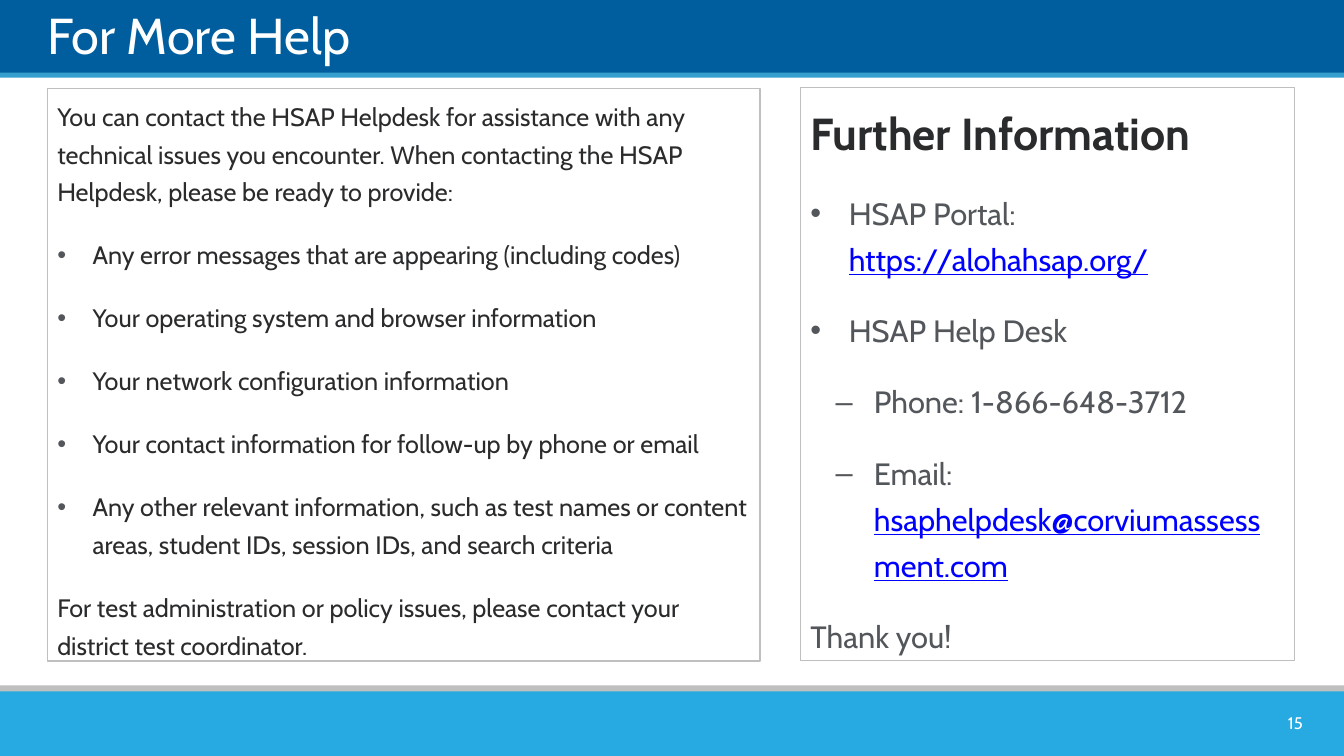
import pptx
import pptx.dml.color
import pptx.enum.shapes
import pptx.enum.text
import pptx.oxml.ns
import pptx.util
from dataclasses import dataclass
from lxml import etree

Inches = pptx.util.Inches
Pt = pptx.util.Pt
Anchor = pptx.enum.text.MSO_ANCHOR
Align = pptx.enum.text.PP_ALIGN


@dataclass(frozen=True)
class Theme:
    font: str = "Cabin"
    navy: str = "005E9E"
    blue: str = "35A0CE"
    sky: str = "27AAE1"
    silver: str = "BFBFBF"
    white: str = "FFFFFF"
    ink: str = "2A2B2D"
    slate: str = "53565A"
    link: str = "0000FF"
    title: int = 36
    heading: int = 32
    contact: int = 22
    body: int = 18
    number: int = 12


@dataclass(frozen=True)
class Line:
    text: str
    size: int
    color: str
    bold: bool = False
    bullet: str = ""
    margin: float = 0
    hang: float = 0
    level: int = 0
    link: str = ""


def rgb(value):
    return pptx.dml.color.RGBColor.from_string(value)


class HelpSlide:
    def __init__(self, slide, theme):
        self.slide = slide
        self.theme = theme

    def rectangle(self, box):
        shape = self.slide.shapes.add_shape(
            pptx.enum.shapes.MSO_SHAPE.RECTANGLE, *map(Inches, box))
        shape.shadow.inherit = False
        return shape

    def band(self, top, height, color):
        band = self.rectangle((0, top, 13.33, height))
        band.fill.solid()
        band.fill.fore_color.rgb = rgb(color)
        band.line.fill.background()

    def style(self, font, size, color, bold=False):
        font.name = self.theme.font
        font.size = Pt(size)
        font.color.rgb = rgb(color)
        font.bold = bold

    def label(self, box, text, size, anchor, align, inset):
        frame = self.slide.shapes.add_textbox(*map(Inches, box)).text_frame
        frame.word_wrap = True
        frame.vertical_anchor = anchor
        frame.margin_left = frame.margin_right = Inches(inset)
        frame.margin_top = frame.margin_bottom = Inches(inset / 2)
        paragraph = frame.paragraphs[0]
        paragraph.text = text
        paragraph.alignment = align
        self.style(paragraph.font, size, self.theme.white)

    def bullet(self, paragraph, line):
        properties = paragraph._p.get_or_add_pPr()
        properties.set("marL", str(Inches(line.margin)))
        properties.set("indent", str(-Inches(line.hang)))
        qn = pptx.oxml.ns.qn
        color = etree.SubElement(properties, qn("a:buClr"))
        etree.SubElement(color, qn("a:srgbClr"), val=self.theme.slate)
        etree.SubElement(properties, qn("a:buFont"), typeface="Arial")
        etree.SubElement(properties, qn("a:buChar"), char=line.bullet)

    def panel(self, box, lines):
        panel = self.rectangle(box)
        panel.fill.background()
        panel.line.color.rgb = rgb(self.theme.silver)
        panel.line.width = Pt(1)
        frame = panel.text_frame
        frame.word_wrap = True
        frame.vertical_anchor = Anchor.TOP
        for index, line in enumerate(lines):
            paragraph = frame.add_paragraph() if index else frame.paragraphs[0]
            paragraph.alignment = Align.LEFT
            paragraph.level = line.level
            paragraph.line_spacing = 1.25
            if index:
                paragraph.space_before = Pt(18)
            if line.bullet:
                self.bullet(paragraph, line)
            self.style(paragraph.font, line.size, line.color, line.bold)
            paragraph.add_run().text = line.text
            if line.link:
                address = paragraph.add_run()
                address.text = line.link
                address.font.color.rgb = rgb(self.theme.link)
                address.font.underline = True


def main():
    theme = Theme()
    deck = pptx.Presentation()
    deck.slide_width, deck.slide_height = Inches(13.33), Inches(7.5)
    page = HelpSlide(deck.slides.add_slide(deck.slide_layouts[6]), theme)

    # Header and footer bands
    for top, height, color in ((-0.01, 0.75, theme.navy), (0.72, 0.05, theme.blue),
                               (6.8, 0.14, theme.silver), (6.86, 0.64, theme.sky)):
        page.band(top, height, color)

    # Title
    page.label((0.47, 0.07, 12.43, 0.57), "For More Help", theme.title,
               Anchor.BOTTOM, Align.LEFT, 0)

    # What to have ready for the helpdesk
    def prose(text):
        return Line(text, theme.body, theme.ink)

    def item(text):
        return Line(text, theme.body, theme.ink, bullet="•", margin=0.35, hang=0.35)

    page.panel((0.47, 0.88, 7.07, 5.68), [
        prose("You can contact the HSAP Helpdesk for assistance with any technical "
              "issues you encounter. When contacting the HSAP Helpdesk, please be "
              "ready to provide:"),
        item("Any error messages that are appearing (including codes)"),
        item("Your operating system and browser information"),
        item("Your network configuration information"),
        item("Your contact information for follow-up by phone or email"),
        item("Any other relevant information, such as test names or content areas, "
             "student IDs, session IDs, and search criteria"),
        prose("For test administration or policy issues, please contact your "
              "district test coordinator."),
    ])

    # Contact details
    def source(text, link=""):
        return Line(text, theme.contact, theme.slate, bullet="•",
                    margin=0.38, hang=0.38, link=link)

    def detail(text, link=""):
        return Line(text, theme.contact, theme.slate, bullet="–",
                    margin=0.63, hang=0.38, level=1, link=link)

    page.panel((7.94, 0.87, 4.9, 5.68), [
        Line("Further Information", theme.heading, theme.ink, bold=True),
        source("HSAP Portal: ", "https://alohahsap.org/"),
        source("HSAP Help Desk"),
        detail("Phone: 1-866-648-3712"),
        detail("Email: ", "hsaphelpdesk@corviumassessment.com"),
        Line("Thank you!", theme.contact, theme.slate),
    ])

    # Slide number
    page.label((12.34, 7.02, 0.68, 0.3), "15", theme.number,
               Anchor.MIDDLE, Align.RIGHT, 0.1)

    deck.save("out.pptx")


if __name__ == "__main__":
    main()
